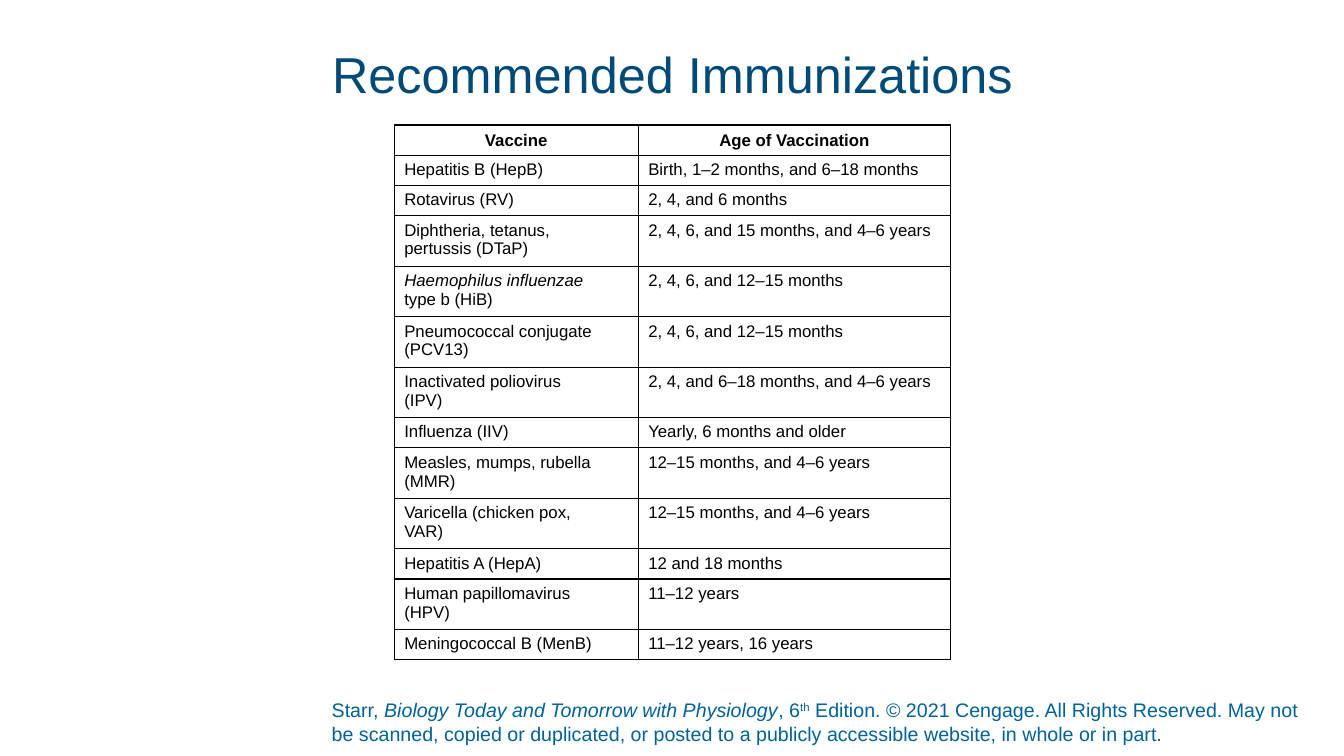
"""Build the recommended immunizations slide."""
from lxml.etree import SubElement
from pptx import Presentation
from pptx.dml.color import RGBColor
from pptx.enum.text import MSO_ANCHOR, PP_ALIGN
from pptx.oxml.ns import qn
from pptx.util import Inches, Pt

FONT = "Arial"
TITLE_BLUE = RGBColor(0x00, 0x4A, 0x78)
FOOTER_BLUE = RGBColor(0x00, 0x62, 0x98)
BLACK = RGBColor(0, 0, 0)

COLUMNS = (2.42, 3.1)
ONE_LINE, TWO_LINES = 0.29, 0.47

SCHEDULE = [
    ("Vaccine", "Age of Vaccination"),
    ("Hepatitis B (HepB)", "Birth, 1–2 months, and 6–18 months"),
    ("Rotavirus (RV)", "2, 4, and 6 months"),
    ("Diphtheria, tetanus,\npertussis (DTaP)", "2, 4, 6, and 15 months, and 4–6 years"),
    ("Haemophilus influenzae\ntype b (HiB)", "2, 4, 6, and 12–15 months"),
    ("Pneumococcal conjugate\n(PCV13)", "2, 4, 6, and 12–15 months"),
    ("Inactivated poliovirus\n(IPV)", "2, 4, and 6–18 months, and 4–6 years"),
    ("Influenza (IIV)", "Yearly, 6 months and older"),
    ("Measles, mumps, rubella\n(MMR)", "12–15 months, and 4–6 years"),
    ("Varicella (chicken pox,\nVAR)", "12–15 months, and 4–6 years"),
    ("Hepatitis A (HepA)", "12 and 18 months"),
    ("Human papillomavirus\n(HPV)", "11–12 years"),
    ("Meningococcal B (MenB)", "11–12 years, 16 years"),
]
ITALIC_NAME = "Haemophilus influenzae"

CREDIT = [
    ("Starr, ", None),
    ("Biology Today and Tomorrow with Physiology", "italic"),
    (", 6", None),
    ("th", "superscript"),
    (" Edition. © 2021 Cengage. All Rights Reserved. May not be scanned, copied or "
     "duplicated, or posted to a publicly accessible website, in whole or in part.", None),
]


def style_font(font, size, color, bold=False, italic=False):
    """Set the look of a run."""
    font.name, font.size = FONT, Pt(size)
    font.color.rgb = color
    font.bold, font.italic = bold, italic


def add_text_box(slide, left, top, width, height, anchor, bottom=0):
    """Add a wrapping text box and return its first paragraph."""
    tf = slide.shapes.add_textbox(*map(Inches, (left, top, width, height))).text_frame
    tf.word_wrap = True
    tf.vertical_anchor = anchor
    tf.margin_left = tf.margin_right = tf.margin_top = 0
    tf.margin_bottom = Inches(bottom)
    return tf.paragraphs[0]


def add_title(slide, text):
    """Add the centred slide title."""
    p = add_text_box(slide, 0.92, 0.4, 11.5, 0.74, MSO_ANCHOR.MIDDLE)
    p.text = text
    p.alignment = PP_ALIGN.CENTER
    p.line_spacing = 0.9
    style_font(p.runs[0].font, 36, TITLE_BLUE)


def add_credit(slide, parts):
    """Add the source line at the foot of the slide."""
    p = add_text_box(slide, 3.29, 6.92, 9.79, 0.52, MSO_ANCHOR.BOTTOM, 0.05)
    for text, style in parts:
        r = p.add_run()
        r.text = text
        style_font(r.font, 14, FOOTER_BLUE, italic=style == "italic")
        if style == "superscript":
            r._r.get_or_add_rPr().set("baseline", "30000")


def add_borders(cell):
    """Draw a thin black line on each side of a cell."""
    tc_pr = cell._tc.get_or_add_tcPr()
    for side in ("lnL", "lnR", "lnT", "lnB"):
        ln = SubElement(tc_pr, qn(f"a:{side}"), w=str(Pt(1)))
        fill = SubElement(ln, qn("a:solidFill"))
        SubElement(fill, qn("a:srgbClr"), val=str(BLACK))


def fill_cell(cell, text, header):
    """Write and format one table cell."""
    cell.text = text
    add_borders(cell)
    cell.fill.background()
    cell.vertical_anchor = MSO_ANCHOR.MIDDLE if header else MSO_ANCHOR.TOP
    for p in cell.text_frame.paragraphs:
        p.alignment = PP_ALIGN.CENTER if header else PP_ALIGN.LEFT
        for r in p.runs:
            style_font(r.font, 12, BLACK, bold=header, italic=r.text == ITALIC_NAME)


def add_schedule(slide, rows):
    """Add the table of vaccines and ages."""
    heights = [TWO_LINES if "\n" in vaccine else ONE_LINE for vaccine, _ in rows]
    frame = (3.91, 1.24, sum(COLUMNS), sum(heights))
    table = slide.shapes.add_table(len(rows), len(COLUMNS), *map(Inches, frame)).table
    table.horz_banding = False
    for column, width in zip(table.columns, COLUMNS):
        column.width = Inches(width)
    for i, (texts, height) in enumerate(zip(rows, heights)):
        table.rows[i].height = Inches(height)
        for j, text in enumerate(texts):
            fill_cell(table.cell(i, j), text, header=i == 0)


def main():
    """Build and save the slide."""
    prs = Presentation()
    prs.slide_width, prs.slide_height = Inches(13.33), Inches(7.5)
    s = prs.slides.add_slide(prs.slide_layouts[6])
    add_credit(s, CREDIT)
    add_title(s, "Recommended Immunizations")
    add_schedule(s, SCHEDULE)
    prs.save("out.pptx")


if __name__ == "__main__":
    main()
